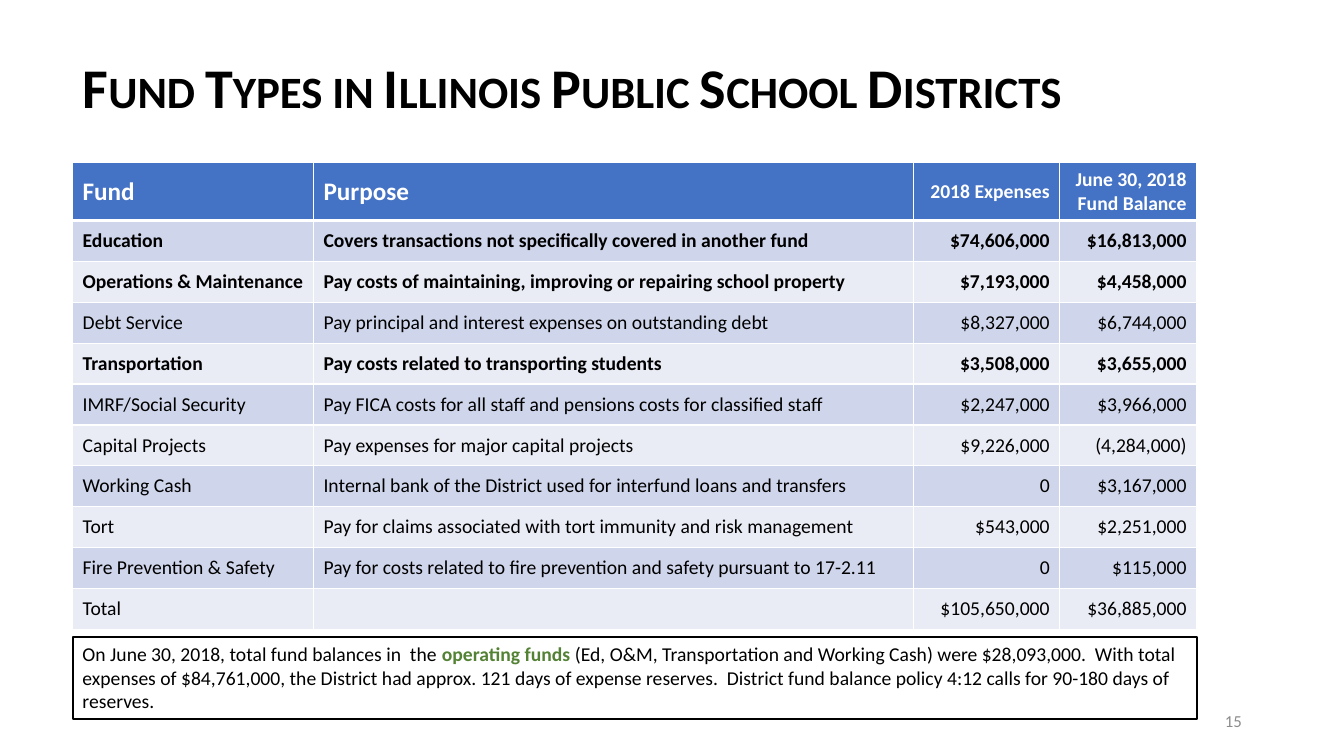
from pptx import Presentation
from pptx.dml.color import RGBColor
from pptx.enum.shapes import MSO_SHAPE
from pptx.enum.text import MSO_ANCHOR, MSO_AUTO_SIZE, PP_ALIGN
from pptx.oxml import parse_xml
from pptx.oxml.ns import nsdecls
from pptx.util import Cm, Pt

HEADERS = ["Fund", "Purpose", "2018 Expenses", "June 30, 2018 Fund Balance"]
FUNDS = [
    ["Education", "Covers transactions not specifically covered in another fund", "$74,606,000", "$16,813,000"],
    ["Operations & Maintenance", "Pay costs of maintaining, improving or repairing school property",
     "$7,193,000", "$4,458,000"],
    ["Debt Service", "Pay principal and interest expenses on outstanding debt", "$8,327,000", "$6,744,000"],
    ["Transportation", "Pay costs related to transporting students", "$3,508,000", "$3,655,000"],
    ["IMRF/Social Security", "Pay FICA costs for all staff and pensions costs for classified staff",
     "$2,247,000", "$3,966,000"],
    ["Capital Projects", "Pay expenses for major capital projects", "$9,226,000", "(4,284,000)"],
    ["Working Cash", "Internal bank of the District used for interfund loans and transfers", "0", "$3,167,000"],
    ["Tort", "Pay for claims associated with tort immunity and risk management", "$543,000", "$2,251,000"],
    ["Fire Prevention & Safety", "Pay for costs related to fire prevention and safety pursuant to 17-2.11",
     "0", "$115,000"],
    ["Total", "", "$105,650,000", "$36,885,000"],
]
BOLD_FUNDS = {"Education", "Operations & Maintenance", "Transportation"}
COLUMN_WIDTHS = [6.07, 15.13, 3.68, 3.45]
ROW_HEIGHT = 1.03
LEFT = 1.83
RESERVES_NOTE = [
    ("On June 30, 2018, total fund balances in  the ", "000000", False),
    ("operating funds", "548235", True),
    (" (Ed, O&M, Transportation and Working Cash) were $28,093,000.  With total expenses of $84,761,000, "
     "the District had approx. 121 days of expense reserves.  District fund balance policy 4:12 calls for "
     "90-180 days of reserves.", "000000", False),
]


def color(hex_string):
    return RGBColor.from_string(hex_string)


class FundSlide:
    font = "Calibri"
    black, white, gray = "000000", "FFFFFF", "8C8C8C"
    header_fill = "4472C4"
    bands = ["CFD5EA", "E9EBF5"]

    def __init__(self, presentation):
        self.slide = presentation.slides.add_slide(presentation.slide_layouts[5])

    def add_run(self, paragraph, text, size, hex_string, bold=False):
        run = paragraph.add_run()
        run.text = text
        run.font.name = self.font
        run.font.size = Pt(size)
        run.font.bold = bold
        run.font.color.rgb = color(hex_string)
        return run

    def add_title(self, text, left, top, width, height):
        title = self.slide.shapes.title
        title.left, title.top, title.width, title.height = Cm(left), Cm(top), Cm(width), Cm(height)
        frame = title.text_frame
        frame.auto_size = MSO_AUTO_SIZE.NONE
        frame.vertical_anchor = MSO_ANCHOR.MIDDLE
        paragraph = frame.paragraphs[0]
        paragraph.alignment = PP_ALIGN.LEFT
        paragraph.line_spacing = 0.9
        run = self.add_run(paragraph, text, 40, self.black, True)
        run.font._element.set("cap", "small")

    def set_borders(self, cell, bottom=1):
        properties = cell._tc.get_or_add_tcPr()
        widths = {"lnL": 1, "lnR": 1, "lnT": 1, "lnB": bottom}
        for position, (side, width) in enumerate(widths.items()):
            line = parse_xml(
                f'<a:{side} {nsdecls("a")} w="{Pt(width)}"><a:solidFill>'
                f'<a:srgbClr val="{self.white}"/></a:solidFill></a:{side}>')
            properties.insert(position, line)

    def fill_cell(self, cell, text, fill, size, hex_string, bold, right_aligned):
        cell.fill.solid()
        cell.fill.fore_color.rgb = color(fill)
        cell.vertical_anchor = MSO_ANCHOR.MIDDLE
        paragraph = cell.text_frame.paragraphs[0]
        paragraph.alignment = PP_ALIGN.RIGHT if right_aligned else PP_ALIGN.LEFT
        if text:
            self.add_run(paragraph, text, size, hex_string, bold)
        else:
            paragraph.font.size = Pt(size)

    def add_fund_table(self, left, top):
        rows = [HEADERS] + FUNDS
        table = self.slide.shapes.add_table(
            len(rows), len(HEADERS), Cm(left), Cm(top),
            Cm(sum(COLUMN_WIDTHS)), Cm(ROW_HEIGHT * len(rows))).table
        for column, width in zip(table.columns, COLUMN_WIDTHS):
            column.width = Cm(width)
        for row_index, values in enumerate(rows):
            table.rows[row_index].height = Cm(ROW_HEIGHT)
            is_header = row_index == 0
            for column_index, text in enumerate(values):
                cell = table.cell(row_index, column_index)
                is_amount = column_index >= 2
                if is_header:
                    self.fill_cell(cell, text, self.header_fill, 14 if is_amount else 18,
                                   self.white, True, is_amount)
                else:
                    self.fill_cell(cell, text, self.bands[(row_index - 1) % 2], 14,
                                   self.black, values[0] in BOLD_FUNDS, is_amount)
                self.set_borders(cell, bottom=3 if is_header else 1)

    def add_note(self, runs, left, top, width, height):
        shape = self.slide.shapes.add_shape(
            MSO_SHAPE.RECTANGLE, Cm(left), Cm(top), Cm(width), Cm(height))
        shape.shadow.inherit = False
        shape.fill.background()
        shape.line.color.rgb = color(self.black)
        shape.line.width = Pt(1.5)
        frame = shape.text_frame
        frame.word_wrap = True
        frame.auto_size = MSO_AUTO_SIZE.SHAPE_TO_FIT_TEXT
        frame.vertical_anchor = MSO_ANCHOR.TOP
        paragraph = frame.paragraphs[0]
        paragraph.alignment = PP_ALIGN.LEFT
        for text, hex_string, bold in runs:
            self.add_run(paragraph, text, 14, hex_string, bold)

    def add_page_number(self, text, left, top, width, height):
        frame = self.slide.shapes.add_textbox(Cm(left), Cm(top), Cm(width), Cm(height)).text_frame
        frame.word_wrap = True
        frame.vertical_anchor = MSO_ANCHOR.MIDDLE
        paragraph = frame.paragraphs[0]
        paragraph.alignment = PP_ALIGN.RIGHT
        self.add_run(paragraph, text, 12, self.gray)


def main():
    presentation = Presentation()
    presentation.slide_width, presentation.slide_height = Cm(33.87), Cm(19.05)
    slide = FundSlide(presentation)
    slide.add_title("Fund Types in Illinois Public School Districts", LEFT, 1.01, 29.72, 2.51)
    slide.add_fund_table(LEFT, 4.1)
    slide.add_note(RESERVES_NOTE, LEFT, 16.06, sum(COLUMN_WIDTHS), 2.06)
    slide.add_page_number("15", 23.93, 17.65, 7.62, 1.01)
    presentation.save("out.pptx")


if __name__ == "__main__":
    main()
